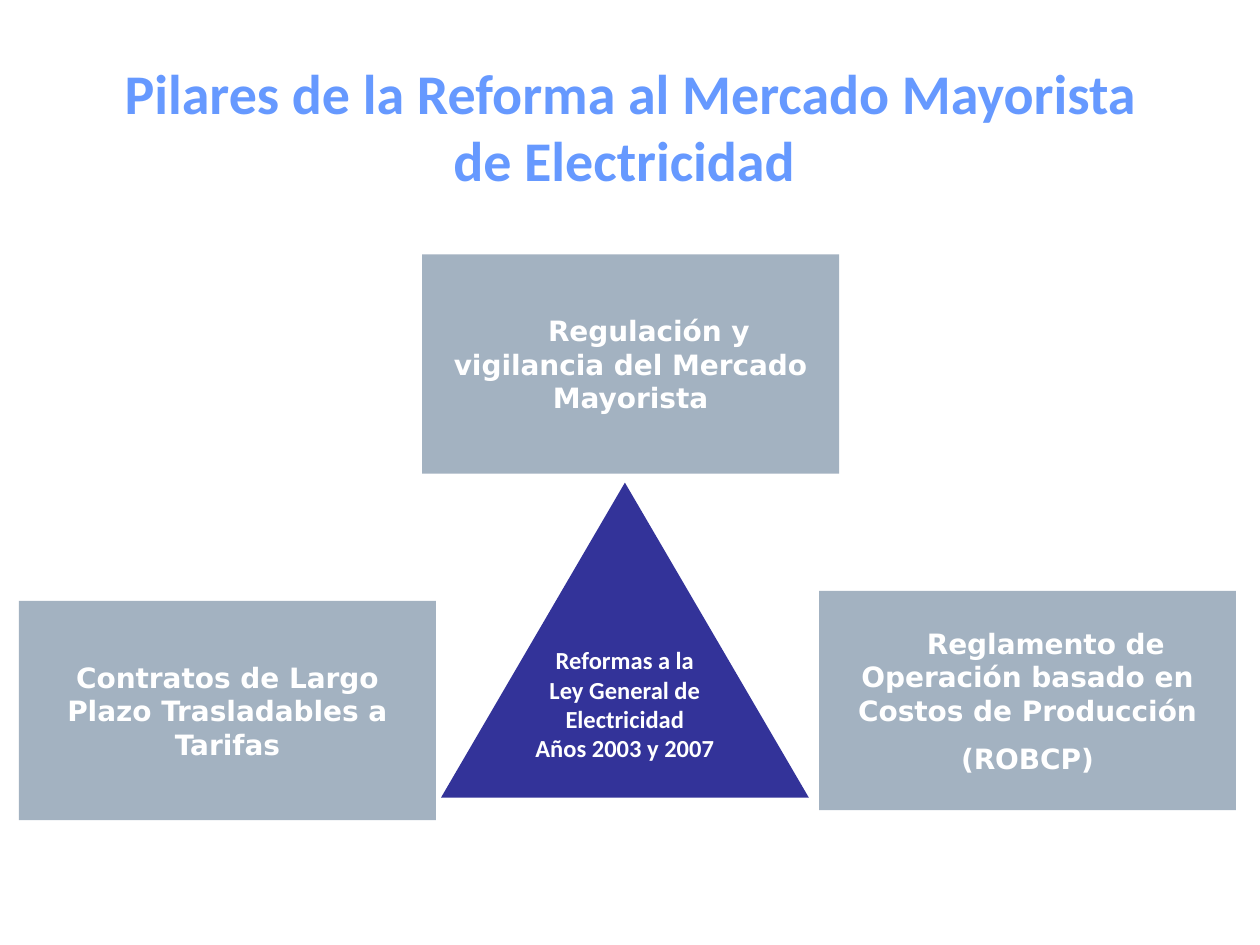
from lxml import etree
from pptx import Presentation
from pptx import util as u
from pptx.dml.color import RGBColor
from pptx.enum import shapes, text
from pptx.oxml.ns import qn

# Content
TITLE = "Pilares de la Reforma al Mercado Mayorista de Electricidad "
CENTER = ["Reformas a la", "Ley General de", "Electricidad", "Años 2003 y 2007"]
PILLARS = [  # left, top, paragraphs
    (10.8, 343.4, ["Contratos de Largo Plazo Trasladables a Tarifas"]),
    (468, 337.7, ["\tReglamento de Operación basado en Costos de Producción",
                  "(ROBCP)"]),
    (241.2, 145.4, ["\tRegulación y vigilancia del Mercado Mayorista"]),
]

# Format
COLORS = {"title": "6699FF", "triangle": "333399", "pillar": "A3B2C1",
          "text": "FFFFFF", "shadow": "000000"}
PILLAR_SIZE = (238.3, 125.3)
TAB_STOPS = (0, 20.9, 68.4)


def color(name):
    return RGBColor.from_string(COLORS[name])


def set_all(target, values):
    for name, value in values.items():
        setattr(target, name, value)


def write(shape, lines, font, size, ink, margins, gap=0, wrap=True):
    frame = shape.text_frame
    left, top, right, bottom = (u.Pt(margin) for margin in margins)
    set_all(frame, {"word_wrap": wrap, "vertical_anchor": text.MSO_ANCHOR.MIDDLE,
                    "auto_size": text.MSO_AUTO_SIZE.NONE,
                    "margin_left": left, "margin_top": top,
                    "margin_right": right, "margin_bottom": bottom})
    for index, line in enumerate(lines):
        para = frame.add_paragraph() if index else frame.paragraphs[0]
        set_all(para, {"alignment": text.PP_ALIGN.CENTER,
                       "space_before": u.Pt(gap if index else 0)})
        if line.startswith("\t"):
            tabs = etree.SubElement(para._p.get_or_add_pPr(), qn("a:tabLst"))
            for stop in TAB_STOPS:
                etree.SubElement(tabs, qn("a:tab"), pos=str(u.Pt(stop)), algn="l")
        span = para.add_run()
        span.text = line
        set_all(span.font, {"name": font, "size": u.Pt(size), "bold": True})
        span.font.color.rgb = color(ink)


def add_block(page, kind, place, fill):
    shape = page.shapes.add_shape(kind, *(u.Pt(length) for length in place))
    shape.shadow.inherit = False
    shape.fill.solid()
    shape.fill.fore_color.rgb = color(fill)
    shape.line.fill.background()
    return shape


def add_text_shadow(span):
    effects = etree.Element(qn("a:effectLst"))
    shadow = etree.SubElement(effects, qn("a:outerShdw"), blurRad="38100",
                              dist="38100", dir="2700000", algn="tl")
    tint = etree.SubElement(shadow, qn("a:srgbClr"), val=COLORS["shadow"])
    etree.SubElement(tint, qn("a:alpha"), val="43000")
    span.font._element.find(qn("a:solidFill")).addnext(effects)


def main():
    deck = Presentation()
    set_all(deck, {"slide_width": u.Pt(720), "slide_height": u.Pt(540)})
    page = deck.slides.add_slide(deck.slide_layouts[5])

    # Title
    title = page.shapes.title
    set_all(title, {"left": u.Pt(45.4), "top": u.Pt(23.8),
                    "width": u.Pt(630), "height": u.Pt(95.8)})
    write(title, [TITLE], "Calibri", 32, "title", (7.2, 3.6, 7.2, 3.6))
    add_text_shadow(title.text_frame.paragraphs[0].runs[0])

    # Central triangle, its text raised by half a line
    triangle = add_block(page, shapes.MSO_SHAPE.ISOSCELES_TRIANGLE,
                         (252, 275.8, 210.2, 180), "triangle")
    write(triangle, CENTER, "Calibri", 14, "text", (7.9, 4.3, 7.9, 21.4), wrap=False)

    # Pillars around it
    for left, top, lines in PILLARS:
        pillar = add_block(page, shapes.MSO_SHAPE.RECTANGLE,
                           (left, top, *PILLAR_SIZE), "pillar")
        write(pillar, lines, "DejaVu Sans", 16, "text", (7.9, 3.6, 7.9, 3.6), gap=8)

    deck.save("out.pptx")


if __name__ == "__main__":
    main()
